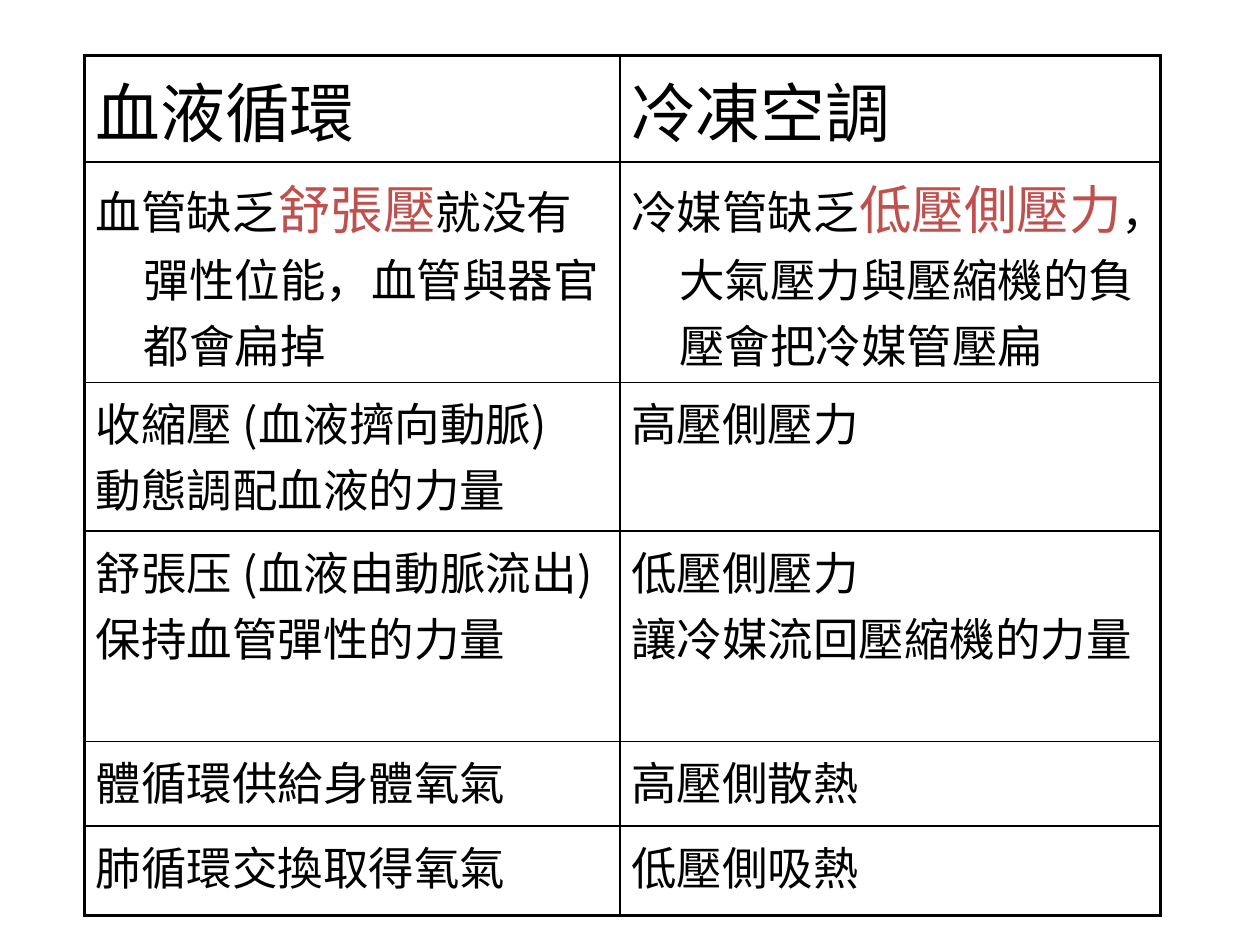
from pptx import Presentation
from pptx.dml.color import RGBColor as Rgb
from pptx.oxml import parse_xml
from pptx.oxml.ns import nsdecls, qn
from pptx.util import Inches, Pt

INK = {"text": "000000", "key": "C0504D", "line": "000000"}
FONT = "Noto Sans CJK SC"
HEAD, BODY, BIG = 37, 26, 30
WIDE, HIGH = 10, 7.5


class Deck:
    """Holds the style and the current slide; lengths are percent of the slide."""

    def __init__(self):
        self.prs = Presentation()
        self.prs.slide_width, self.prs.slide_height = Inches(WIDE), Inches(HIGH)
        self.slide = self.prs.slides.add_slide(self.prs.slide_layouts[6])

    def across(self, share):
        return Inches(WIDE * share / 100)

    def down(self, share):
        return Inches(HIGH * share / 100)

    def run(self, para, text, size, ink="text"):
        run = para.add_run()
        run.text = text
        font = run.font
        font.name, font.size = FONT, Pt(size)
        font.color.rgb = Rgb.from_string(INK[ink])
        # East Asian typeface follows the Latin one
        run._r.get_or_add_rPr().find(qn("a:latin")).addnext(
            parse_xml(f'<a:ea {nsdecls("a")} typeface="{FONT}"/>'))

    def edges(self, cell, outer):
        props = cell._tc.get_or_add_tcPr()
        for spot, side in enumerate("LRTB"):
            width = Pt(2 if side in outer else 1)
            props.insert(spot, parse_xml(
                f'<a:ln{side} {nsdecls("a")} w="{width}"><a:solidFill>'
                f'<a:srgbClr val="{INK["line"]}"/></a:solidFill></a:ln{side}>'))

    def cell(self, cell, paras, size, outer):
        cell.fill.background()
        cell.margin_left = cell.margin_right = Inches(0.09)
        cell.margin_top = cell.margin_bottom = Inches(0.05)
        frame = cell.text_frame
        for num, parts in enumerate(paras):
            para = frame.add_paragraph() if num else frame.paragraphs[0]
            props = para._p.get_or_add_pPr()
            props.set("marL", str(Inches(0.38)))
            props.set("indent", str(-Inches(0.38)))
            for part in parts:
                if isinstance(part, tuple):
                    self.run(para, part[0], BIG, "key")
                else:
                    self.run(para, part, size)
        self.edges(cell, outer)

    def table(self, left, top, cols, rows, data):
        table = self.slide.shapes.add_table(
            len(rows), len(cols), self.across(left), self.down(top),
            self.across(sum(cols)), self.down(sum(rows))).table
        table.first_row = table.horz_banding = False
        for num, share in enumerate(cols):
            table.columns[num].width = self.across(share)
        for r, share in enumerate(rows):
            table.rows[r].height = self.down(share)
            for c, paras in enumerate(data[r]):
                outer = "L" if c == 0 else "R"
                outer += "T" if r == 0 else "B" if r == len(rows) - 1 else ""
                self.cell(table.cell(r, c), paras, HEAD if r == 0 else BODY, outer)


# Each cell is a list of paragraphs, each a list of parts; a tuple marks a key term
PAIRS = [
    ([["血液循環"]], [["冷凍空調"]]),
    ([["血管缺乏", ("舒張壓",), "就没有彈性位能，血管與器官都會扁掉"]],
     [["冷媒管缺乏", ("低壓側壓力",), "，大氣壓力與壓縮機的負壓會把冷媒管壓扁"]]),
    ([["收縮壓 (血液擠向動脈)"], ["動態調配血液的力量"]], [["高壓側壓力"]]),
    ([["舒張压 (血液由動脈流出)"], ["保持血管彈性的力量"]],
     [["低壓側壓力"], ["讓冷媒流回壓縮機的力量"]]),
    ([["體循環供給身體氧氣"]], [["高壓側散熱"]]),
    ([["肺循環交換取得氧氣"]], [["低壓側吸熱"]]),
]


def main():
    deck = Deck()
    # Comparison of blood circulation and air conditioning
    deck.table(6.7, 5.9, [42.5, 42.9], [9.47, 18.93, 15.73, 15.73, 8.93, 9.47], PAIRS)
    deck.prs.save("out.pptx")


if __name__ == "__main__":
    main()
